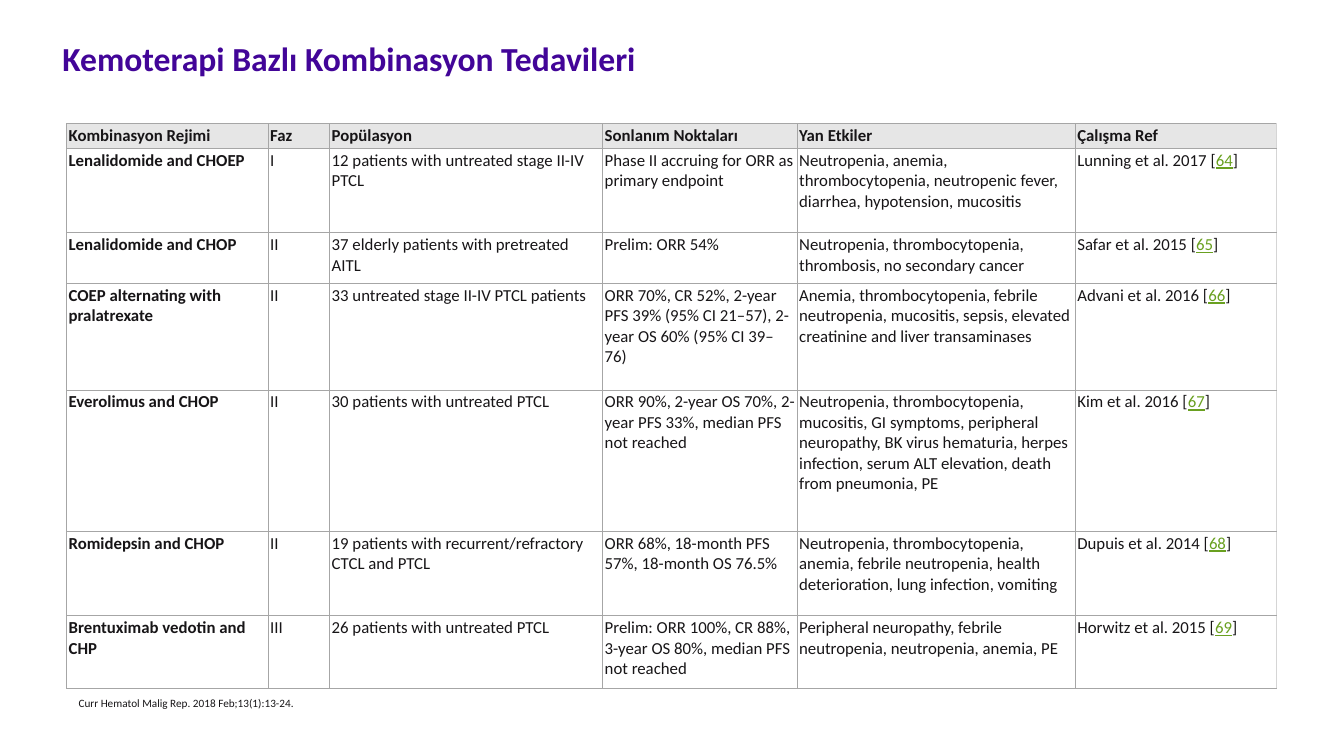
from dataclasses import dataclass

from lxml import etree
from pptx import Presentation
from pptx.dml.color import RGBColor
from pptx.enum import text
from pptx.oxml import ns
from pptx.util import Cm, Pt

TITLE = "Kemoterapi Bazlı Kombinasyon Tedavileri"
SOURCE = "Curr Hematol Malig Rep.\u00a02018 Feb;13(1):13-24."
HEADERS = ("Kombinasyon Rejimi", "Faz", "Popülasyon", "Sonlanım Noktaları",
           "Yan Etkiler", "Çalışma Ref")
# Regimen, phase, population, endpoints, side effects, study, reference number
TRIALS = [
    ("Lenalidomide and CHOEP", "I", "12 patients with untreated stage II-IV PTCL",
     "Phase II accruing for ORR as primary endpoint",
     "Neutropenia, anemia, thrombocytopenia, neutropenic fever, diarrhea, "
     "hypotension, mucositis",
     "Lunning et al. 2017", "64"),
    ("Lenalidomide and CHOP", "II", "37 elderly patients with pretreated AITL",
     "Prelim: ORR 54%",
     "Neutropenia, thrombocytopenia, thrombosis, no secondary cancer",
     "Safar et al. 2015", "65"),
    ("COEP alternating with pralatrexate", "II",
     "33 untreated stage II-IV PTCL patients",
     "ORR 70%, CR 52%, 2-year PFS 39% (95% CI 21–57), 2-year OS 60% (95% CI 39–76)",
     "Anemia, thrombocytopenia, febrile neutropenia, mucositis, sepsis, "
     "elevated creatinine and liver transaminases",
     "Advani et al. 2016", "66"),
    ("Everolimus and CHOP", "II", "30 patients with untreated PTCL",
     "ORR 90%, 2-year OS 70%, 2-year PFS 33%, median PFS not reached",
     "Neutropenia, thrombocytopenia, mucositis, GI symptoms, peripheral "
     "neuropathy, BK virus hematuria, herpes infection, serum ALT elevation, "
     "death from pneumonia, PE",
     "Kim et al. 2016", "67"),
    ("Romidepsin and CHOP", "II",
     "19 patients with recurrent/refractory CTCL and PTCL",
     "ORR 68%, 18-month PFS 57%, 18-month OS 76.5%",
     "Neutropenia, thrombocytopenia, anemia, febrile neutropenia, health "
     "deterioration, lung infection, vomiting",
     "Dupuis et al. 2014", "68"),
    ("Brentuximab vedotin and CHP", "III", "26 patients with untreated PTCL",
     "Prelim: ORR 100%, CR 88%, 3-year OS 80%, median PFS not reached",
     "Peripheral neuropathy, febrile neutropenia, neutropenia, anemia, PE",
     "Horwitz et al. 2015", "69"),
]
COLUMN_WIDTHS = (5.08, 1.55, 6.88, 4.9, 7.01, 5.08)
ROW_HEIGHTS = (0.61, 2.13, 1.27, 2.69, 3.56, 2.13, 1.83)


@dataclass(frozen=True)
class Theme:
    font: str = "Calibri"
    ink: str = "171517"
    title: str = "420598"
    reference: str = "69A020"
    header: str = "E6E6E6"
    border: str = "A6A6A6"
    outer_border: str = "D5D5D5"
    title_size: int = 24
    table_size: int = 12
    source_size: int = 8


THEME = Theme()


def format_font(font, size, color, bold=False):
    font.name, font.size, font.bold = THEME.font, Pt(size), bold
    font.color.rgb = RGBColor.from_string(color)


def draw_borders(cell, right_color):
    properties = cell._tc.get_or_add_tcPr()
    for side in "LRTB":
        line = etree.SubElement(properties, ns.qn(f"a:ln{side}"), w=str(Pt(0.75)))
        fill = etree.SubElement(line, ns.qn("a:solidFill"))
        color = right_color if side == "R" else THEME.border
        etree.SubElement(fill, ns.qn("a:srgbClr"), val=color)


def fill_cell(cell, pieces, bold, is_header, is_last):
    """Write the pieces as runs; every second piece is a reference number."""
    cell.margin_left = cell.margin_right = Cm(0.05)
    cell.margin_top = cell.margin_bottom = Cm(0.05)
    draw_borders(cell, THEME.outer_border if is_last else THEME.border)
    if is_header:
        cell.fill.solid()
        cell.fill.fore_color.rgb = RGBColor.from_string(THEME.header)
    else:
        cell.fill.background()
    para = cell.text_frame.paragraphs[0]
    for index, piece in enumerate(pieces):
        span = para.add_run()
        span.text = piece
        is_reference = index % 2 == 1
        format_font(span.font, THEME.table_size,
                    THEME.reference if is_reference else THEME.ink, bold)
        span.font.underline = is_reference


def add_title(page):
    title = page.shapes.title
    title.left, title.top, title.width, title.height = map(Cm, (1.32, 0.84, 24.46, 1.27))
    frame = title.text_frame
    frame.text = TITLE
    frame.vertical_anchor = text.MSO_ANCHOR.TOP
    para = frame.paragraphs[0]
    para.alignment = text.PP_ALIGN.LEFT
    format_font(para.runs[0].font, THEME.title_size, THEME.title, True)


def add_trials(page):
    rows = [[(header,) for header in HEADERS]]
    for *facts, study, number in TRIALS:
        rows.append([(fact,) for fact in facts] + [(f"{study} [", number, "]")])
    table = page.shapes.add_table(
        len(rows), len(HEADERS), Cm(1.68), Cm(3.12),
        Cm(sum(COLUMN_WIDTHS)), Cm(sum(ROW_HEIGHTS))).table
    table.horz_banding = False
    for column, width in zip(table.columns, COLUMN_WIDTHS):
        column.width = Cm(width)
    for row, height in zip(table.rows, ROW_HEIGHTS):
        row.height = Cm(height)
    for r, row in enumerate(rows):
        for c, pieces in enumerate(row):
            fill_cell(table.cell(r, c), pieces, bold=r == 0 or c == 0,
                      is_header=r == 0, is_last=c == len(HEADERS) - 1)


def add_source(page):
    box = page.shapes.add_textbox(Cm(1.73), Cm(17.42), Cm(16.94), Cm(0.94))
    frame = box.text_frame
    frame.word_wrap = True
    frame.text = SOURCE
    format_font(frame.paragraphs[0].runs[0].font, THEME.source_size, THEME.ink)


def main():
    deck = Presentation()
    deck.slide_width, deck.slide_height = Cm(33.87), Cm(19.05)
    page = deck.slides.add_slide(deck.slide_layouts[5])
    add_title(page)
    add_trials(page)
    add_source(page)
    deck.save("out.pptx")


if __name__ == "__main__":
    main()
